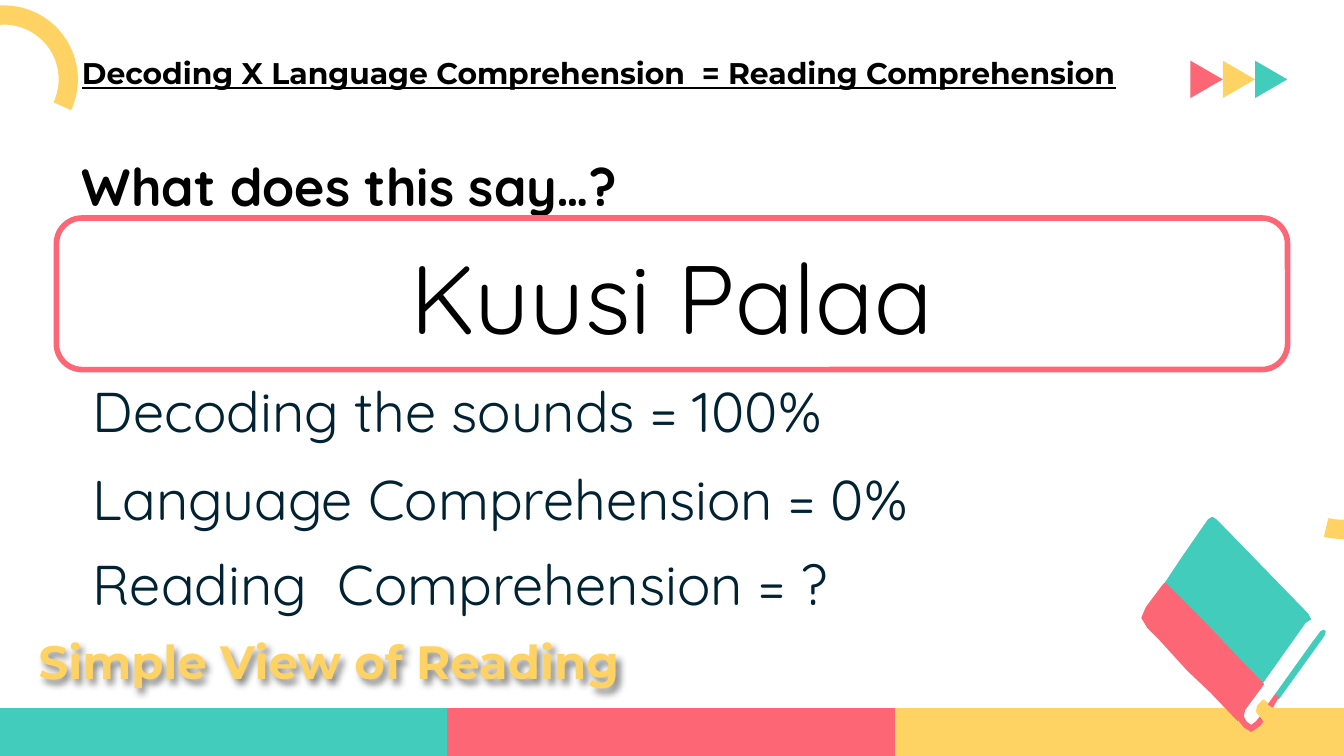
"""Builds the Simple View of Reading slide."""
from dataclasses import dataclass

from lxml import etree
from pptx import Presentation
from pptx.dml.color import RGBColor
from pptx.enum.shapes import MSO_SHAPE
from pptx.enum.text import MSO_ANCHOR, MSO_AUTO_SIZE, PP_ALIGN
from pptx.oxml.ns import qn
from pptx.util import Pt

RECTANGLE = MSO_SHAPE.RECTANGLE
TRIANGLE = MSO_SHAPE.ISOSCELES_TRIANGLE
ARC = MSO_SHAPE.BLOCK_ARC
ROUNDED = MSO_SHAPE.ROUNDED_RECTANGLE
LEFT, CENTER = PP_ALIGN.LEFT, PP_ALIGN.CENTER
TOP, MIDDLE = MSO_ANCHOR.TOP, MSO_ANCHOR.MIDDLE
FIXED = MSO_AUTO_SIZE.NONE


@dataclass(frozen=True)
class Theme:
    teal: RGBColor = RGBColor(0x42, 0xCC, 0xBC)
    pink: RGBColor = RGBColor(0xFD, 0x67, 0x75)
    yellow: RGBColor = RGBColor(0xFF, 0xD3, 0x63)
    white: RGBColor = RGBColor(0xFF, 0xFF, 0xFF)
    black: RGBColor = RGBColor(0, 0, 0)
    navy: RGBColor = RGBColor(0x01, 0x22, 0x33)
    heading: str = "Montserrat"
    body: str = "Quicksand"
    formula_size: int = 16
    footer_size: int = 25
    question_size: int = 28
    answer_size: int = 30
    phrase_size: int = 52


theme = Theme()


def paint(shape, fill, line=None, width=0.75):
    shape.shadow.inherit = False
    shape.fill.solid()
    shape.fill.fore_color.rgb = fill
    if line is None:
        shape.line.fill.background()
    else:
        shape.line.color.rgb = line
        shape.line.width = Pt(width)


def write(shape, box, lines, align=LEFT, anchor=TOP):
    shape.left, shape.top, shape.width, shape.height = (Pt(v) for v in box)
    frame = shape.text_frame
    frame.word_wrap = True
    frame.auto_size = FIXED
    frame.vertical_anchor = anchor
    frame.margin_left = frame.margin_right = Pt(7.2)
    frame.margin_top = frame.margin_bottom = Pt(7.2)
    frame.text = "\n".join(line[0] for line in lines)
    for paragraph, (_, font, size, color, bold) in zip(frame.paragraphs, lines):
        paragraph.alignment = align
        paragraph.font.name = font
        paragraph.font.size = Pt(size)
        paragraph.font.color.rgb = color
        paragraph.font.bold = bold
    return frame.paragraphs


deck = Presentation()
deck.slide_width, deck.slide_height = Pt(720), Pt(405)
slide = deck.slides.add_slide(deck.slide_layouts[5])
shapes = slide.shapes

formula, question = write(shapes.title, (36.7, 22.3, 672.5, 100), [
    ("Decoding X Language Comprehension  = Reading Comprehension",
     theme.heading, theme.formula_size, theme.black, True),
    ("What does this say…?", theme.body, theme.question_size, theme.black, True),
])
formula.font.underline = True
question.space_before = Pt(34)

for column, color in enumerate((theme.teal, theme.pink, theme.yellow)):
    band = shapes.add_shape(RECTANGLE, Pt(240 * column), Pt(379.5), Pt(240), Pt(25.5))
    paint(band, color, color)

for step, color in enumerate((theme.pink, theme.yellow, theme.teal)):
    arrow = shapes.add_shape(TRIANGLE, Pt(636.4 + 17.3 * step), Pt(33.9), Pt(20), Pt(17.3))
    arrow.rotation = 90
    paint(arrow, color)

for left, top, turn, start in ((679, 209.5, 259, 45.37), (-37.5, 2.9, 180, 69)):
    ring = shapes.add_shape(ARC, Pt(left), Pt(top), Pt(79.2), Pt(79.2))
    ring.rotation = turn
    ring.adjustments[0] = start * 0.6
    ring.adjustments[1] = 204.76 * 0.6
    ring.adjustments[2] = 0.13
    paint(ring, theme.yellow)

footer = shapes.add_textbox(0, 0, 0, 0)
write(footer, (13.7, 336.2, 628.6, 36), [
    ("Simple View of Reading", theme.heading, theme.footer_size, theme.yellow, True),
], anchor=MIDDLE)
effects = etree.SubElement(footer.element.spPr, qn("a:effectLst"))
glow = etree.SubElement(effects, qn("a:outerShdw"), blurRad=str(Pt(4)),
                        dist=str(Pt(3)), dir="2700000", algn="tl", rotWithShape="0")
shade = etree.SubElement(glow, qn("a:srgbClr"), val=str(theme.black))
etree.SubElement(shade, qn("a:alpha"), val="45000")

frame = shapes.add_shape(ROUNDED, Pt(30.2), Pt(116.8), Pt(659.6), Pt(81.2))
frame.adjustments[0] = 0.17
paint(frame, theme.white, theme.pink, 3)

write(shapes.add_textbox(0, 0, 0, 0), (114.5, 120.2, 491, 77.8), [
    ("Kuusi Palaa", theme.body, theme.phrase_size, theme.black, False),
], align=CENTER)

for top, answer in (
    (194.4, "Decoding the sounds = 100%"),
    (241.6, "Language Comprehension = 0%"),
    (287.3, "Reading  Comprehension = ?"),
):
    write(shapes.add_textbox(0, 0, 0, 0), (42.5, top, 530, 51.1), [
        (answer, theme.body, theme.answer_size, theme.navy, False),
    ])

cover = [(649.4, 277.2), (647.3, 278.6), (634.3, 297.4), (624.2, 312.5),
         (628.6, 318.2), (674.6, 364.3), (676.8, 367.2), (679.7, 364.3),
         (695.5, 342), (702, 331.9), (700.6, 329), (651.6, 278.6)]
spine = [(624.2, 312.5), (622.8, 313.9), (614.2, 325.4), (611.8, 331),
         (614.9, 336.2), (621.4, 342.7), (636.5, 359.3), (648.7, 370.8),
         (663.1, 385.9), (669.6, 374.4), (674.6, 367.2), (674.6, 364.3),
         (645.1, 333.4)]
pages = [(702, 332.6), (699.8, 334.1), (676.8, 366.5), (675.4, 367.9),
         (666.7, 379.4), (665.3, 383.8), (666.7, 387.4), (670.3, 389.5),
         (673.2, 387.4), (675.4, 384.5), (675.4, 383), (673.9, 380.9),
         (675.4, 378), (677.5, 376.6), (680.4, 377.3), (684, 373),
         (706.3, 342), (707.8, 338.4)]
ribbon = [(709.2, 337.7), (707.8, 338.4), (703.4, 344.2), (683.3, 372.2),
          (684.7, 374.4), (685.4, 373.7), (709.2, 340.6), (709.9, 338.4)]
edge = [(674.6, 364.3), (666.7, 376.6), (663.8, 381.6), (663.8, 385.9),
        (666.7, 389.5), (670.3, 391.7), (674.6, 388.8), (676.8, 385.9),
        (675.4, 383.8), (673.2, 386.6), (670.3, 388.8), (667.4, 386.6),
        (666, 383.8), (666.7, 380.2), (676.8, 366.5)]
tassel = [(676.8, 375.1), (673.9, 378), (673.2, 380.9), (673.9, 382.3),
          (675.4, 383.8), (676.8, 385.9), (683.3, 391), (683.3, 386.6),
          (683.9, 382.8), (681.8, 378.7), (679.7, 377.3)]
knot = [(683.3, 372.2), (679.7, 377.3), (681.8, 378.7), (684.7, 373.7)]

for outline, color in (
    (cover, theme.teal), (spine, theme.pink), (pages, theme.white),
    (ribbon, theme.teal), (edge, theme.pink), (tassel, theme.yellow),
    (knot, theme.pink),
):
    corners = [(Pt(x), Pt(y)) for x, y in outline]
    builder = shapes.build_freeform(*corners[0])
    builder.add_line_segments(corners[1:])
    paint(builder.convert_to_shape(), color, color)

deck.save("out.pptx")
